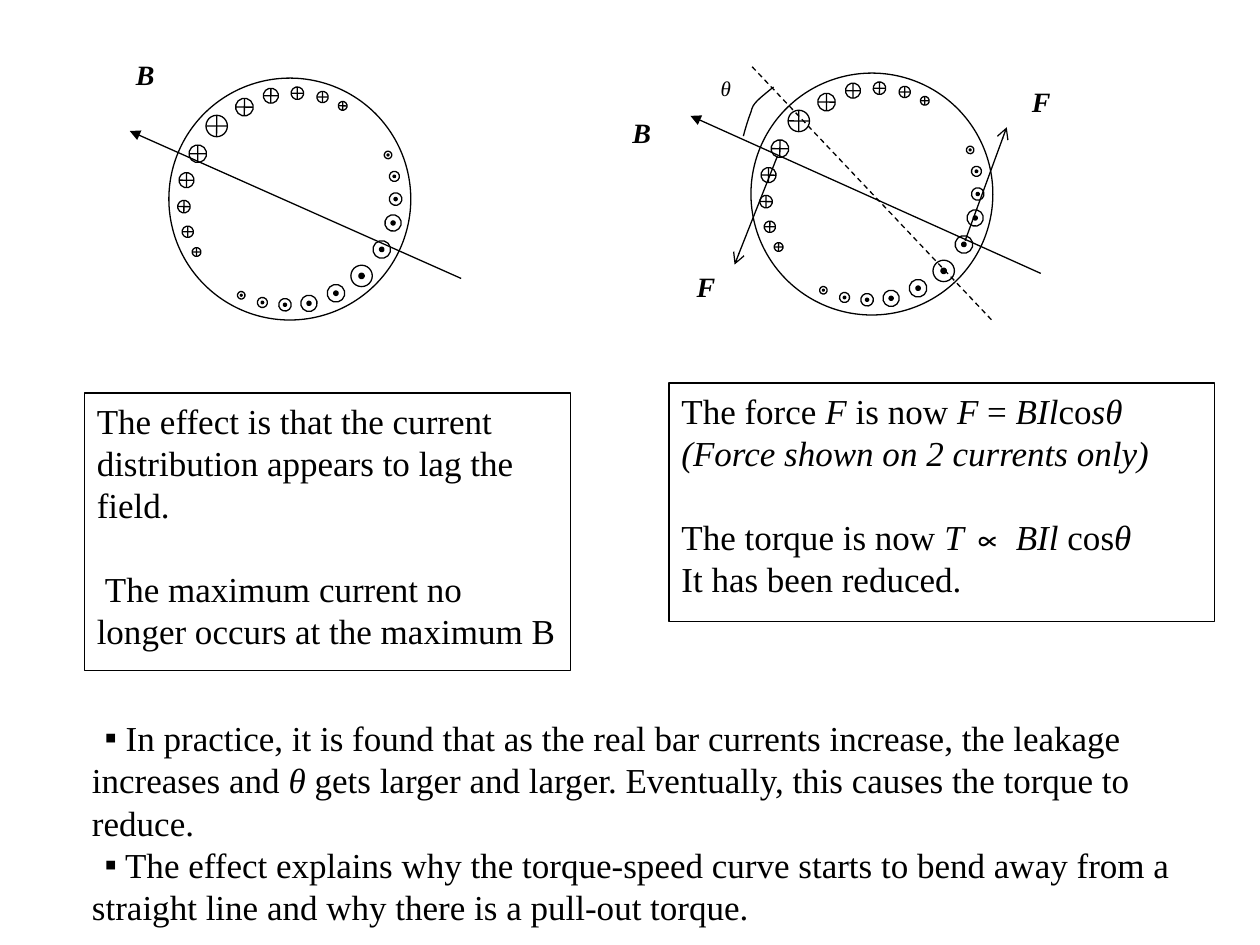
import math
from dataclasses import dataclass

from lxml import etree
from pptx import Presentation
from pptx.dml.color import RGBColor
from pptx.enum.dml import MSO_LINE
from pptx.enum.shapes import MSO_CONNECTOR, MSO_SHAPE
from pptx.enum.text import MSO_ANCHOR, MSO_AUTO_SIZE
from pptx.oxml.ns import qn
from pptx.util import Inches, Pt

STRAIGHT = MSO_CONNECTOR.STRAIGHT
ELLIPSE = MSO_SHAPE.OVAL
CROSSED_CIRCLE = MSO_SHAPE.FLOWCHART_SUMMING_JUNCTION
DASH = MSO_LINE.DASH
TOP = MSO_ANCHOR.TOP
NO_AUTOFIT = MSO_AUTO_SIZE.NONE


@dataclass(frozen=True)
class Theme:
    font: str = "Times New Roman"
    ink: RGBColor = RGBColor(0, 0, 0)
    paper: RGBColor = RGBColor(255, 255, 255)
    body: Pt = Pt(20)
    vector: Pt = Pt(16)
    angle: Pt = Pt(12)
    line: Pt = Pt(0.75)
    blank_line: Pt = Pt(24)


@dataclass(frozen=True)
class Box:
    left: float
    top: float
    width: float
    height: float

    def emu(self) -> tuple:
        return tuple(map(Inches, (self.left, self.top, self.width, self.height)))


@dataclass(frozen=True)
class Conductor:
    dx: float
    dy: float
    size: float

    def mirrored(self, axis: float) -> "Conductor":
        c, s = math.cos(math.radians(2 * axis)), math.sin(math.radians(2 * axis))
        return Conductor(c * self.dx + s * self.dy, s * self.dx - c * self.dy, self.size)


@dataclass(frozen=True)
class Label:
    text: str
    box: Box
    size: Pt
    bold: bool = True


@dataclass(frozen=True)
class Ray:
    start: tuple
    end: tuple
    head: str = ""
    dashed: bool = False


@dataclass(frozen=True)
class Rotor:
    center: tuple
    labels: tuple
    rays: tuple
    arc: tuple = ()


@dataclass(frozen=True)
class Line:
    runs: tuple
    gap_before: bool = False


THEME = Theme()
ROTOR_SIZE = 1.92
ROTOR_TILT = 315.4
INWARD_AXIS = 45
OUTWARD_AXIS = 46.3

INWARD = (
    Conductor(-0.58, -0.58, 0.17), Conductor(-0.73, -0.36, 0.14),
    Conductor(-0.82, -0.15, 0.12), Conductor(-0.84, 0.06, 0.1),
    Conductor(-0.81, 0.26, 0.09), Conductor(-0.74, 0.42, 0.07),
)
OUTWARD = (
    Conductor(0.57, 0.61, 0.17), Conductor(0.73, 0.4, 0.14),
    Conductor(0.82, 0.19, 0.13), Conductor(0.84, 0, 0.1),
    Conductor(0.83, -0.18, 0.08), Conductor(0.78, -0.35, 0.06),
)

ROTORS = (
    Rotor(
        (2.3, 1.58),
        (Label("B", Box(0.98, 0.41, 0.62, 0.46), THEME.vector),),
        (Ray((3.66, 2.21), (1.03, 1.04), "triangle"),),
    ),
    Rotor(
        (6.92, 1.54),
        (
            Label("θ", Box(5.62, 0.55, 0.42, 0.5), THEME.angle, False),
            Label("F", Box(5.43, 2.09, 0.61, 0.46), THEME.vector),
            Label("B", Box(4.92, 0.87, 0.61, 0.46), THEME.vector),
            Label("F", Box(8.09, 0.62, 0.61, 0.46), THEME.vector),
        ),
        (
            Ray((8.26, 2.17), (5.48, 0.92), "triangle"),
            Ray((5.97, 0.53), (7.89, 2.56), dashed=True),
            Ray((6.17, 1.24), (5.83, 2.1), "arrow"),
            Ray((7.66, 1.91), (7.99, 1.01), "arrow"),
        ),
        (
            ((6.14, 0.69), (6.09, 0.73), (6.04, 0.77), (6.01, 0.8)),
            ((6.01, 0.8), (5.98, 0.83), (5.97, 0.85), (5.96, 0.89)),
            ((5.96, 0.89), (5.94, 0.94), (5.91, 1.04), (5.9, 1.08)),
        ),
    ),
)

LAG_EFFECT = (
    Line(("The effect is that the current distribution appears to lag the field.",)),
    Line((" The maximum current no longer occurs at the maximum B",), True),
)
REDUCED_TORQUE = (
    Line(("The force ", "F", " is now ", "F", " = ", "BIl", "co", "sθ")),
    Line(("", "(Force shown on 2 currents only)")),
    Line(("The torque is now ", "T ∝ BIl", " cos", "θ"), True),
    Line(("It has been reduced.",)),
)
PRACTICE = (
    Line((" In practice, it is found that as the real bar currents increase, the leakage "
          "increases and ", "θ ", "gets larger and larger. Eventually, this causes the "
          "torque to reduce.")),
    Line((" The effect explains why the torque-speed curve starts to bend away from a "
          "straight line and why there is a pull-out torque.",)),
)


def paint(shape, fill: RGBColor) -> None:
    shape.shadow.inherit = False
    shape.fill.solid()
    shape.fill.fore_color.rgb = fill
    shape.line.color.rgb = THEME.ink
    shape.line.width = THEME.line


def style(paragraph, size: Pt) -> None:
    paragraph.font.name = THEME.font
    paragraph.font.size = size
    paragraph.font.color.rgb = THEME.ink


def draw_round(shapes, kind, center: tuple, size: float, fill: RGBColor) -> None:
    box = Box(center[0] - size / 2, center[1] - size / 2, size, size)
    circle = shapes.add_shape(kind, *box.emu())
    circle.rotation = ROTOR_TILT
    paint(circle, fill)


def draw_label(shapes, label: Label) -> None:
    frame = shapes.add_textbox(*label.box.emu()).text_frame
    frame.word_wrap = True
    paragraph = frame.paragraphs[0]
    paragraph.text = label.text
    style(paragraph, label.size)
    paragraph.font.bold = label.bold
    paragraph.font.italic = True


def draw_ray(shapes, ray: Ray) -> None:
    connector = shapes.add_connector(STRAIGHT, *map(Inches, ray.start + ray.end))
    connector.line.color.rgb = THEME.ink
    connector.line.width = THEME.line
    if ray.dashed:
        connector.line.dash_style = DASH
    if ray.head:
        etree.SubElement(connector.line._get_or_add_ln(), qn("a:tailEnd"), type=ray.head)
    etree.SubElement(connector.element.spPr, qn("a:effectLst"))


def bezier(points: tuple, t: float) -> tuple:
    weights = [math.comb(3, i) * t**i * (1 - t) ** (3 - i) for i in range(4)]
    return tuple(Inches(sum(w * p[axis] for w, p in zip(weights, points))) for axis in (0, 1))


def draw_arc(shapes, curves: tuple) -> None:
    builder = shapes.build_freeform(*bezier(curves[0], 0))
    builder.add_line_segments(
        [bezier(curve, step / 4) for curve in curves for step in range(1, 5)], close=False)
    arc = builder.convert_to_shape()
    paint(arc, THEME.paper)
    arc.fill.background()


def draw_rotor(slide, rotor: Rotor) -> None:
    shapes = slide.shapes.add_group_shape().shapes
    for label in rotor.labels:
        draw_label(shapes, label)
    x, y = rotor.center
    draw_round(shapes, ELLIPSE, rotor.center, ROTOR_SIZE, THEME.paper)
    for bar in INWARD + tuple(bar.mirrored(INWARD_AXIS) for bar in INWARD[1:]):
        draw_round(shapes, CROSSED_CIRCLE, (x + bar.dx, y + bar.dy), bar.size, THEME.paper)
    for bar in OUTWARD + tuple(bar.mirrored(OUTWARD_AXIS) for bar in OUTWARD[1:]):
        center = (x + bar.dx, y + bar.dy)
        draw_round(shapes, ELLIPSE, center, bar.size, THEME.paper)
        draw_round(shapes, ELLIPSE, center, bar.size / 4, THEME.ink)
    for ray in rotor.rays:
        draw_ray(shapes, ray)
    if rotor.arc:
        draw_arc(shapes, rotor.arc)


def write_lines(frame, lines: tuple, bullet: str = "") -> None:
    frame.word_wrap = True
    frame.auto_size = NO_AUTOFIT
    frame.vertical_anchor = TOP
    for index, line in enumerate(lines):
        paragraph = frame.add_paragraph() if index else frame.paragraphs[0]
        paragraph.space_before = THEME.blank_line if line.gap_before else Pt(0)
        if bullet:
            paragraph.level = 1
            properties = paragraph._p.get_or_add_pPr()
            properties.set("marL", str(Inches(0.2)))
            properties.set("indent", str(Inches(0.1)))
            etree.SubElement(properties, qn("a:buChar"), char=bullet)
        style(paragraph, THEME.body)
        for position, text in enumerate(line.runs):
            if text:
                run = paragraph.add_run()
                run.text = text
                run.font.italic = position % 2 == 1


def draw_note(slide, box: Box, lines: tuple) -> None:
    note = slide.shapes.add_textbox(*box.emu())
    paint(note, THEME.paper)
    write_lines(note.text_frame, lines)


def main() -> None:
    deck = Presentation()
    deck.slide_width, deck.slide_height = Inches(10), Inches(7.5)
    slide = deck.slides.add_slide(deck.slide_layouts[1])
    title, practice = slide.placeholders
    title.element.getparent().remove(title.element)
    for rotor in ROTORS:
        draw_rotor(slide, rotor)
    draw_note(slide, Box(0.67, 3.12, 3.86, 2.2), LAG_EFFECT)
    draw_note(slide, Box(5.31, 3.04, 4.33, 1.89), REDUCED_TORQUE)
    practice.left, practice.top, practice.width, practice.height = Box(0.43, 5.64, 9.29, 1.86).emu()
    write_lines(practice.text_frame, PRACTICE, "▪")
    deck.save("out.pptx")


if __name__ == "__main__":
    main()
